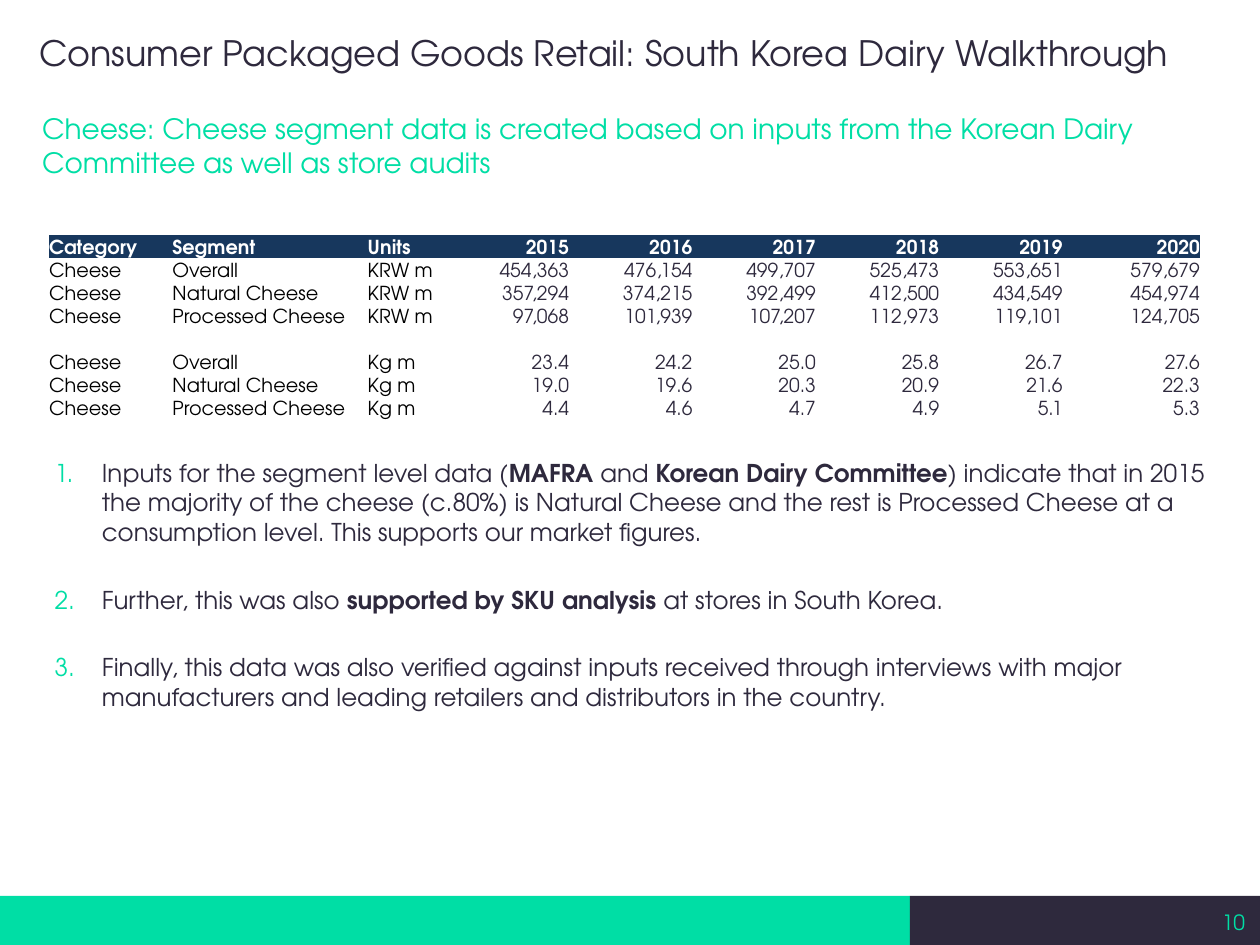
import pptx
import pptx.dml.color
import pptx.enum.shapes
import pptx.enum.text
import pptx.oxml.ns
import pptx.util
from lxml import etree

Pt = pptx.util.Pt
ALIGN = pptx.enum.text.PP_ALIGN
ANCHOR = pptx.enum.text.MSO_ANCHOR

# Content
HEADING = "Consumer Packaged Goods Retail: South Korea Dairy Walkthrough"
SUBTITLE = ("Cheese: Cheese segment data is created based on inputs from the "
            "Korean Dairy Committee as well as store audits")
PAGE_NUMBER = "10"
HEADER = ("Category", "Segment", "Units", "2015", "2016", "2017", "2018", "2019", "2020")
SEGMENTS = [
    ("KRW m", [
        ("Overall", "454,363", "476,154", "499,707", "525,473", "553,651", "579,679"),
        ("Natural Cheese", "357,294", "374,215", "392,499", "412,500", "434,549", "454,974"),
        ("Processed Cheese", "97,068", "101,939", "107,207", "112,973", "119,101", "124,705"),
    ]),
    ("Kg m", [
        ("Overall", "23.4", "24.2", "25.0", "25.8", "26.7", "27.6"),
        ("Natural Cheese", "19.0", "19.6", "20.3", "20.9", "21.6", "22.3"),
        ("Processed Cheese", "4.4", "4.6", "4.7", "4.9", "5.1", "5.3"),
    ]),
]
# Each point alternates regular and bold text
POINTS = [
    ("Inputs for the segment level data (", "MAFRA ", "and", " Korean Dairy Committee",
     ") indicate that in 2015 the majority of the cheese (c.80%) is Natural Cheese and "
     "the rest is Processed Cheese at a consumption level. This supports our market figures."),
    ("Further, this was also ", "supported by SKU analysis ", "at stores in South Korea."),
    ("Finally, this data was also verified against inputs received through interviews with "
     "major manufacturers and leading retailers and distributors in the country.",),
]

# Style
FONT = "TeX Gyre Adventor"
GREEN, DARK, NAVY, BLACK, WHITE = "00DEA5", "2E293D", "17375D", "000000", "FFFFFF"
WIDTH, HEIGHT = 720, 540
FOOTER_TOP, FOOTER_SPLIT = 512, 520
ROW_HEIGHT = 13.2
COLUMN_WIDTHS = [70.5, 111.6, 52.6] + [70.5] * 6
YEAR_GAP = 8


def color(value):
    return pptx.dml.color.RGBColor.from_string(value)


def write(paragraph, text, size, fill, bold=False, align=ALIGN.LEFT):
    paragraph.alignment = align
    run = paragraph.add_run()
    run.text = text
    run.font.name, run.font.size, run.font.bold = FONT, Pt(size), bold
    run.font.color.rgb = color(fill)


def place(shape, left, top, width, height):
    shape.left, shape.top, shape.width, shape.height = map(Pt, (left, top, width, height))


def set_frame(frame, anchor=ANCHOR.TOP, margins=(0, 0, 0, 0)):
    frame.word_wrap = True
    frame.auto_size = pptx.enum.text.MSO_AUTO_SIZE.NONE
    frame.vertical_anchor = anchor
    (frame.margin_left, frame.margin_top,
     frame.margin_right, frame.margin_bottom) = map(Pt, margins)


def add_property(parent, tag, **attributes):
    return etree.SubElement(parent, pptx.oxml.ns.qn(tag), attributes)


def set_indent(paragraph, left, first):
    properties = paragraph._p.get_or_add_pPr()
    properties.set("marL", str(Pt(left)))
    properties.set("indent", str(Pt(first)))
    return properties


def add_footer(slide):
    for left, right, fill in ((0, FOOTER_SPLIT, GREEN), (FOOTER_SPLIT, WIDTH, DARK)):
        bar = slide.shapes.add_shape(
            pptx.enum.shapes.MSO_SHAPE.RECTANGLE, Pt(left), Pt(FOOTER_TOP),
            Pt(right - left), Pt(HEIGHT - FOOTER_TOP))
        bar.shadow.inherit = False
        bar.fill.solid()
        bar.fill.fore_color.rgb = color(fill)
        bar.line.fill.background()
    number = slide.shapes.add_textbox(Pt(549.5), Pt(512.6), Pt(162), Pt(28.8))
    set_frame(number.text_frame, ANCHOR.MIDDLE)
    write(number.text_frame.paragraphs[0], PAGE_NUMBER, 12, GREEN, align=ALIGN.RIGHT)


def add_titles(title, heading):
    place(title, 24, 64, 673, 46)
    set_frame(title.text_frame)
    write(title.text_frame.paragraphs[0], SUBTITLE, 16, GREEN)

    place(heading, 0, 0, WIDTH, 60)
    set_frame(heading.text_frame, ANCHOR.MIDDLE, (22.3, 0, 0, 0))
    paragraph = heading.text_frame.paragraphs[0]
    add_property(set_indent(paragraph, 0, 0), "a:buNone")
    paragraph.space_before = Pt(0)
    write(paragraph, HEADING, 20, DARK)


def add_points(body):
    place(body, 24, 258, 674.5, 196)
    set_frame(body.text_frame, margins=(7.2, 3.6, 7.2, 3.6))
    for index, parts in enumerate(POINTS):
        paragraph = body.text_frame.add_paragraph() if index else body.text_frame.paragraphs[0]
        properties = set_indent(paragraph, 27, -27)
        add_property(add_property(properties, "a:buClr"), "a:srgbClr", val=GREEN)
        add_property(properties, "a:buFont", typeface=FONT)
        add_property(properties, "a:buAutoNum", type="arabicPeriod")
        paragraph.space_before = Pt(22 if index else 0)
        for position, part in enumerate(parts):
            write(paragraph, part, 14, DARK, bold=position % 2 == 1)


def add_data_table(slide):
    rows = [HEADER]
    for unit, segments in SEGMENTS:
        if len(rows) > 1:
            rows.append([""] * len(HEADER))
        rows += [("Cheese", name, unit, *values) for name, *values in segments]

    frame = slide.shapes.add_table(
        len(rows), len(HEADER), Pt(28), Pt(134.2),
        Pt(sum(COLUMN_WIDTHS)), Pt(ROW_HEIGHT * len(rows)))
    table = frame.table
    table.first_row = table.horz_banding = False
    # Plain style without grid lines
    for style in frame.element.iter(pptx.oxml.ns.qn("a:tableStyleId")):
        style.text = "{2D5ABB26-0587-4C30-8999-92F81FD0307C}"
    for column, width in zip(table.columns, COLUMN_WIDTHS):
        column.width = Pt(width)

    for row_index, values in enumerate(rows):
        table.rows[row_index].height = Pt(ROW_HEIGHT)
        is_header = row_index == 0
        for column_index, value in enumerate(values):
            cell = table.cell(row_index, column_index)
            is_year = column_index >= 3
            cell.margin_left = cell.margin_top = cell.margin_bottom = 0
            cell.margin_right = Pt(YEAR_GAP if is_year and column_index < len(HEADER) - 1 else 0)
            cell.vertical_anchor = ANCHOR.BOTTOM
            if is_header:
                cell.fill.solid()
                cell.fill.fore_color.rgb = color(NAVY)
            else:
                cell.fill.background()
            paragraph = cell.text_frame.paragraphs[0]
            if value:
                write(paragraph, value, 11, WHITE if is_header else DARK if is_year else BLACK,
                      bold=is_header, align=ALIGN.RIGHT if is_year else ALIGN.LEFT)
            else:
                ending = add_property(paragraph._p, "a:endParaRPr", sz="1100")
                add_property(ending, "a:latin", typeface=FONT)


def main():
    presentation = pptx.Presentation()
    presentation.slide_width, presentation.slide_height = Pt(WIDTH), Pt(HEIGHT)
    # Two Content layout: a title and two body placeholders
    slide = presentation.slides.add_slide(presentation.slide_layouts[3])
    title, heading, body = list(slide.placeholders)[:3]
    add_footer(slide)
    add_titles(title, heading)
    add_points(body)
    add_data_table(slide)
    presentation.save("out.pptx")


if __name__ == "__main__":
    main()
